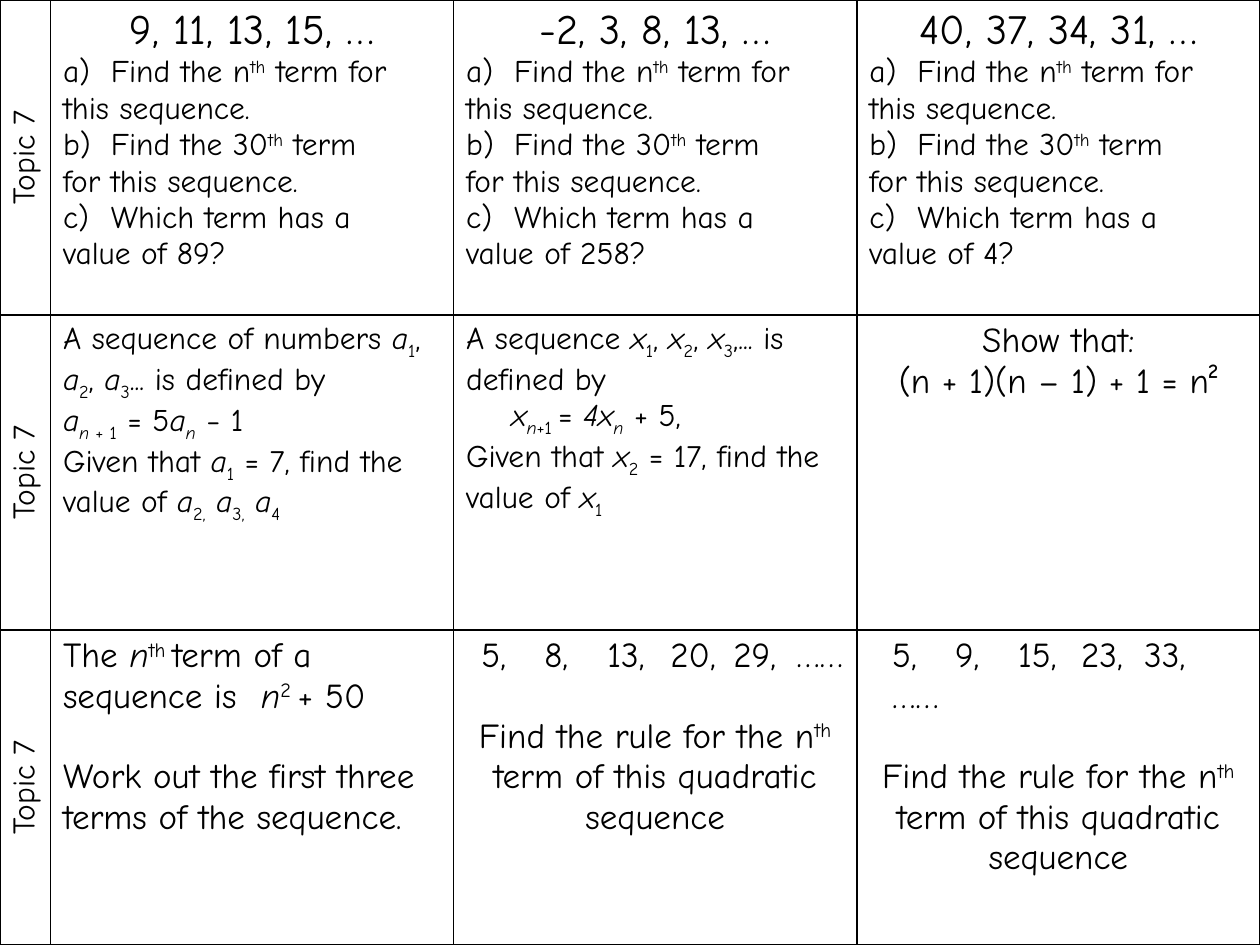
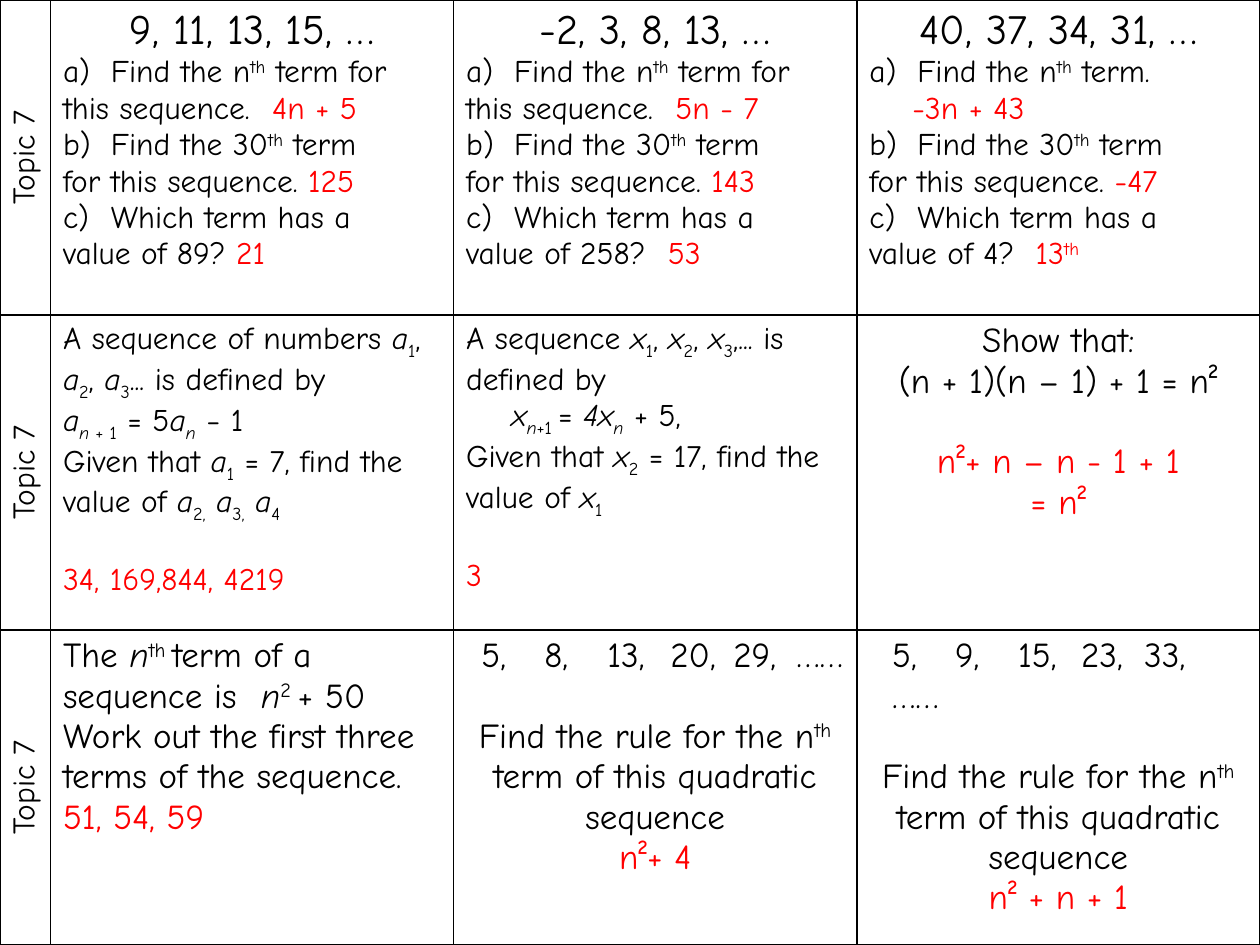
from dataclasses import dataclass
from typing import Iterator, NamedTuple

from lxml.etree import SubElement
from pptx import Presentation
from pptx.dml.color import RGBColor
from pptx.enum.text import PP_ALIGN as Align
from pptx.oxml.ns import qn
from pptx.util import Inches, Pt


@dataclass(frozen=True)
class Theme:
    font: str = "Comic Neue"
    ink: RGBColor = RGBColor(0, 0, 0)
    answer: RGBColor = RGBColor(0xFF, 0, 0)
    border: str = "000000"
    border_width: int = Pt(1)
    body: int = 18
    large: int = 20
    heading: int = 24
    body_gap: int = 21
    large_gap: int = 23
    superscript: str = "30000"
    subscript: str = "-25000"


THEME = Theme()
TOPIC = "Topic 7"
PART_TAB = 0.38
COLUMN_WIDTHS = (0.4, 3.2, 3.2, 3.2)
ROW_HEIGHT = 2.5
ROW_COUNT = 3


class Line(NamedTuple):
    """One paragraph; text marks *italic*, ^superscript^, _subscript_ and ~answer~."""
    text: str
    size: int = THEME.body
    align: Align = Align.LEFT
    gap: int = 0
    indent: float = 0
    tabs: tuple[float, ...] = ()


class Span(NamedTuple):
    text: str
    marks: frozenset[str]


class NthTermCard(NamedTuple):
    terms: str
    rule: str
    thirtieth: str
    value: int
    position: str
    position_tab: float
    rule_below: bool = False


Card = list[Line]

NTH_TERM_CARDS = (
    NthTermCard("9, 11, 13, 15, …", "4n + 5", "125", 89, " 21", 1.6),
    NthTermCard("-2, 3, 8, 13, …", "5n - 7", "143", 258, "\t53", 1.6),
    NthTermCard("40, 37, 34, 31, …", "-3n + 43", "-47", 4, "\t13^th^", 1.32, True),
)


def nth_term_card(card: NthTermCard, answers: bool) -> Card:
    if card.rule_below and answers:
        part_a = [Line("a)\tFind the n^th^ term.", tabs=(PART_TAB,)),
                  Line(f"~{card.rule}~", indent=0.34)]
    else:
        part_a = [Line(f"a)\tFind the n^th^ term for\nthis sequence.~\t{card.rule}~",
                       tabs=(PART_TAB, 1.66))]
    return [
        Line(card.terms, THEME.heading, Align.CENTER),
        *part_a,
        Line(f"b)\tFind the 30^th^ term\nfor this sequence.~ {card.thirtieth}~",
             tabs=(PART_TAB,)),
        Line(f"c)\tWhich term has a\nvalue of {card.value}?~{card.position}~",
             tabs=(PART_TAB, card.position_tab)),
    ]


def recurrence_cards() -> list[Card]:
    forward = [
        Line("A sequence of numbers *a*_1_, *a*_2_, *a*_3_... is defined by\n"
             "*a*_*n* + 1_ = 5*a*_*n*_ − 1"),
        Line("Given that *a*_1_ = 7, find the value of *a*_2,_ *a*_3,_ *a*_4_"),
        Line("~34, 169,844, 4219~", gap=THEME.body_gap),
    ]
    backward = [
        Line("A sequence *x*_1_, *x*_2_, *x*_3_,... is defined by"),
        Line("*x*_*n*+1 _= *4x*_*n*_ + 5,", indent=0.36),
        Line("Given that *x*_2_ = 17, find the value of *x*_1_"),
        Line("~3~", gap=THEME.body_gap),
    ]
    return [forward, backward]


def proof_card() -> Card:
    return [
        Line("Show that:", THEME.large, Align.CENTER),
        Line("(n + 1)(n – 1) + 1 = n²", THEME.large, Align.CENTER),
        Line("~n²+ n – n - 1 + 1~", THEME.large, Align.CENTER, THEME.large_gap),
        Line("~= n²~", THEME.large, Align.CENTER),
    ]


def first_terms_card(answers: bool) -> Card:
    return [
        Line("The *n*^th ^term of a sequence is\t*n*^2 ^+ 50", THEME.large, tabs=(1.57,)),
        Line("Work out the first three terms of the sequence.~\n51, 54, 59~",
             THEME.large, gap=0 if answers else THEME.large_gap),
    ]


def quadratic_card(terms: str, stops: tuple[float, ...], rule: str) -> Card:
    """The first stop is where the first term starts."""
    first, *following = stops
    return [
        Line(terms.replace(" ", "\t"), THEME.large, indent=first, tabs=tuple(following)),
        Line("Find the rule for the n^th^ term of this quadratic sequence",
             THEME.large, Align.CENTER, THEME.large_gap),
        Line(f"~{rule}~", THEME.large, Align.CENTER),
    ]


def question_grid(answers: bool) -> list[list[Card]]:
    return [
        [nth_term_card(card, answers) for card in NTH_TERM_CARDS],
        [*recurrence_cards(), proof_card()],
        [first_terms_card(answers),
         quadratic_card("5, 8, 13, 20, 29, ……", (0.12, 0.49, 0.96, 1.44, 2, 2.51), "n²+ 4"),
         quadratic_card("5, 9, 15, 23, 33, ……", (0.18, 0.56, 0.93, 1.44, 1.94, 2.46),
                        "n² + n + 1")],
    ]


def split_spans(text: str) -> Iterator[Span]:
    """Cut the text wherever a mark switches on or off, or a line breaks."""
    marks: frozenset[str] = frozenset()
    pending = ""
    for letter in text:
        if letter not in "*^_~\n":
            pending += letter
            continue
        if pending:
            yield Span(pending, marks)
            pending = ""
        if letter == "\n":
            yield Span(letter, marks)
        else:
            marks = marks ^ {letter}
    if pending:
        yield Span(pending, marks)


def write_span(paragraph, span: Span, size: int) -> None:
    if span.text == "\n":
        paragraph.add_line_break()
        return
    run = paragraph.add_run()
    run.text = span.text
    run.font.name = THEME.font
    run.font.size = Pt(size)
    run.font.italic = "*" in span.marks
    run.font.color.rgb = THEME.answer if "~" in span.marks else THEME.ink
    for mark, baseline in (("^", THEME.superscript), ("_", THEME.subscript)):
        if mark in span.marks:
            run.font._element.set("baseline", baseline)


def write_lines(cell, lines: Card, answers: bool) -> None:
    frame = cell.text_frame
    frame.word_wrap = True
    paragraph = None
    for line in lines:
        spans = [span for span in split_spans(line.text) if answers or "~" not in span.marks]
        if not spans:
            continue
        paragraph = frame.add_paragraph() if paragraph is not None else frame.paragraphs[0]
        properties = paragraph._p.get_or_add_pPr()
        if line.indent:
            properties.set("marL", str(Inches(line.indent)))
            properties.set("indent", "0")
        if line.tabs:
            tab_list = SubElement(properties, qn("a:tabLst"))
            for stop in line.tabs:
                SubElement(tab_list, qn("a:tab"), pos=str(Inches(stop)), algn="l")
        paragraph.alignment = line.align
        if line.gap:
            paragraph.space_before = Pt(line.gap)
        for span in spans:
            write_span(paragraph, span, line.size)


def style_cell(cell) -> None:
    properties = cell._tc.get_or_add_tcPr()
    for side in ("lnL", "lnR", "lnT", "lnB"):
        edge = SubElement(properties, qn(f"a:{side}"), w=str(THEME.border_width))
        fill = SubElement(edge, qn("a:solidFill"))
        SubElement(fill, qn("a:srgbClr"), val=THEME.border)
    cell.fill.background()


def add_question_slide(deck, answers: bool) -> None:
    slide = deck.slides.add_slide(deck.slide_layouts[6])
    grid = slide.shapes.add_table(
        ROW_COUNT, len(COLUMN_WIDTHS), Inches(0), Inches(0),
        deck.slide_width, deck.slide_height).table
    grid.first_row = grid.horz_banding = False
    for column, width in zip(grid.columns, COLUMN_WIDTHS):
        column.width = Inches(width)
    topic = [Line(TOPIC, align=Align.CENTER)]
    for row_index, cards in enumerate(question_grid(answers)):
        grid.rows[row_index].height = Inches(ROW_HEIGHT)
        for column_index, lines in enumerate([topic, *cards]):
            cell = grid.cell(row_index, column_index)
            style_cell(cell)
            write_lines(cell, lines, answers)
        grid.cell(row_index, 0)._tc.get_or_add_tcPr().set("vert", "vert270")


def main() -> None:
    deck = Presentation()
    deck.slide_width = Inches(sum(COLUMN_WIDTHS))
    deck.slide_height = Inches(ROW_HEIGHT * ROW_COUNT)
    for answers in (False, True):
        add_question_slide(deck, answers)
    deck.save("out.pptx")


if __name__ == "__main__":
    main()
